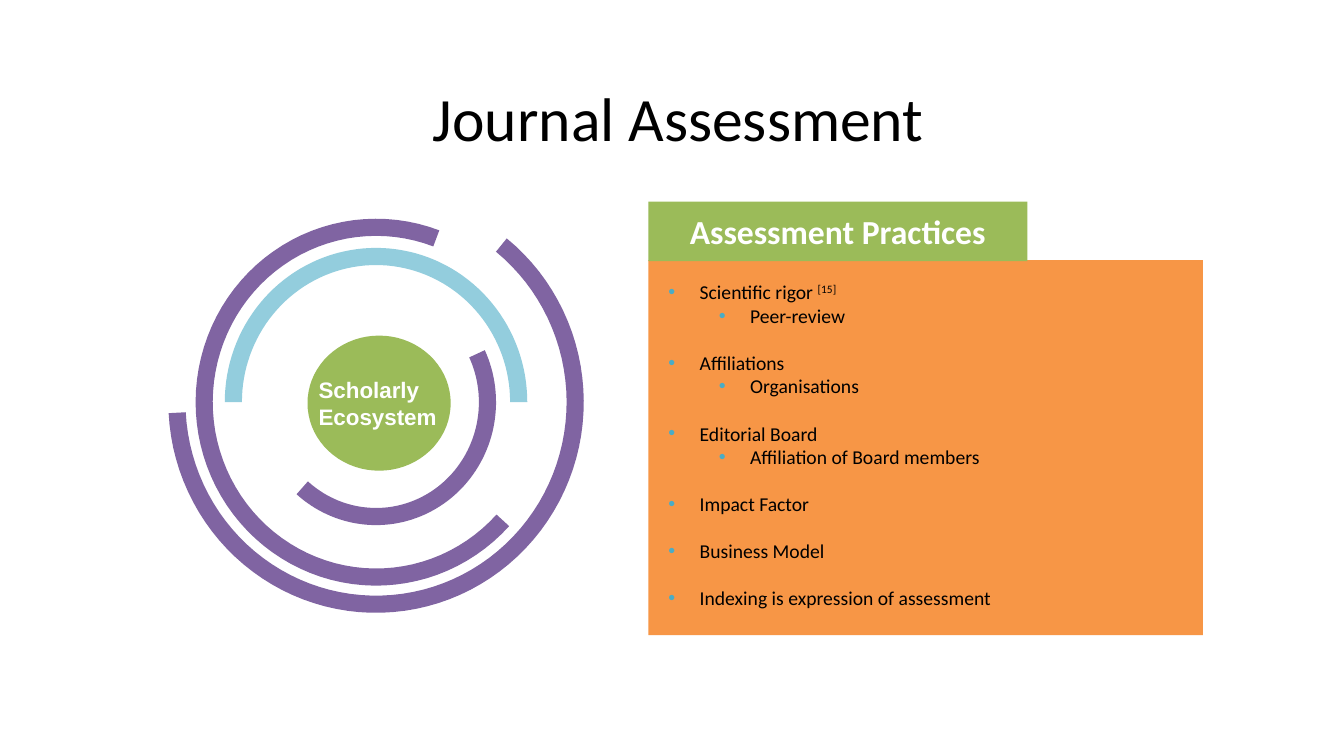
import math

import lxml.etree
import pptx
import pptx.dml.color
import pptx.enum.shapes
import pptx.enum.text
import pptx.oxml.ns
import pptx.util

Inches, Pt = pptx.util.Inches, pptx.util.Pt
ANCHOR = pptx.enum.text.MSO_ANCHOR
ALIGN = pptx.enum.text.PP_ALIGN

COLORS = {
    "black": "000000",
    "white": "FFFFFF",
    "orange": "F79646",
    "green": "9BBB59",
    "purple": "8064A2",
    "sky": "93CDDD",
    "bullet": "4BACC6",
}

RING_CENTER = (3.73, 3.99)
RING_THICKNESS = 0.17
RING_SQUEEZE = 0.03  # horizontal radius is this much shorter than the vertical

# vertical outer radius, start and end angle (clockwise from east), colour
RINGS = [
    (1.22, -25, 131.5, "purple"),
    (1.53, 180, 360, "sky"),
    (1.82, 42.5, 290.5, "purple"),
    (2.09, -51, 177, "purple"),
]

PRACTICES = [
    ("Scientific rigor ", "[15]", "Peer-review"),
    ("Affiliations", None, "Organisations"),
    ("Editorial Board", None, "Affiliation of Board members"),
    ("Impact Factor", None, None),
    ("Business Model", None, None),
    ("Indexing is expression of assessment", None, None),
]


def arc(center, rx, ry, start, end, steps=72):
    """Points along an ellipse, angles in degrees clockwise from east."""
    angles = [math.radians(start + (end - start) * i / steps) for i in range(steps + 1)]
    return [(center[0] + rx * math.cos(a), center[1] + ry * math.sin(a)) for a in angles]


class SlideBuilder:
    def __init__(self, slide, font="Calibri"):
        self.slide = slide
        self.font = font

    def style(self, sp, color):
        sp.shadow.inherit = False
        sp.fill.solid()
        sp.fill.fore_color.rgb = pptx.dml.color.RGBColor.from_string(COLORS[color])
        sp.line.fill.background()
        return sp

    def frame(self, sp, insets, anchor):
        tf = sp.text_frame
        tf.word_wrap = True
        tf.auto_size = pptx.enum.text.MSO_AUTO_SIZE.NONE
        tf.vertical_anchor = anchor
        left, top, right, bottom = insets
        tf.margin_left, tf.margin_right = Inches(left), Inches(right)
        tf.margin_top, tf.margin_bottom = Inches(top), Inches(bottom)
        return tf

    def run(self, p, text, size, color, bold=False, font=None):
        r = p.add_run()
        r.text = text
        r.font.name = font or self.font
        r.font.size = Pt(size)
        r.font.bold = bold
        r.font.color.rgb = pptx.dml.color.RGBColor.from_string(COLORS[color])
        return r

    def title(self, text, x, y, w, h):
        sp = self.slide.shapes.title
        sp.left, sp.top, sp.width, sp.height = (Inches(v) for v in (x, y, w, h))
        p = self.frame(sp, (0.1, 0.05, 0.1, 0.05), ANCHOR.MIDDLE).paragraphs[0]
        p.alignment = ALIGN.CENTER
        self.run(p, text, 44, "black")

    def rect(self, x, y, w, h, color):
        sp = self.slide.shapes.add_shape(
            pptx.enum.shapes.MSO_SHAPE.RECTANGLE,
            Inches(x), Inches(y), Inches(w), Inches(h))
        return self.style(sp, color)

    def polygon(self, shapes, points, color):
        points = [(Inches(x), Inches(y)) for x, y in points]
        builder = shapes.build_freeform(*points[0])
        builder.add_line_segments(points[1:], close=True)
        return self.style(builder.convert_to_shape(), color)

    def ring(self, shapes, radius, start, end, color):
        inner = radius - RING_THICKNESS
        outer_edge = arc(RING_CENTER, radius - RING_SQUEEZE, radius, start, end)
        inner_edge = arc(RING_CENTER, inner - RING_SQUEEZE, inner, end, start)
        self.polygon(shapes, outer_edge + inner_edge, color)

    def bullet(self, p, level):
        p.level = level
        pPr = p._p.get_or_add_pPr()
        pPr.set("marL", str(Inches(0.31 + 0.5 * level)))
        pPr.set("indent", str(Inches(-0.31)))
        qn = pptx.oxml.ns.qn
        clr = lxml.etree.SubElement(pPr, qn("a:buClr"))
        lxml.etree.SubElement(clr, qn("a:srgbClr")).set("val", COLORS["bullet"])
        lxml.etree.SubElement(pPr, qn("a:buFont")).set("typeface", "Arial")
        lxml.etree.SubElement(pPr, qn("a:buChar")).set("char", "•")

    def bullet_line(self, p, text, level, gap):
        self.bullet(p, level)
        p.alignment = ALIGN.LEFT
        p.line_spacing = Pt(16.8)
        p.space_before = Pt(gap)
        self.run(p, text, 14, "black")

    def practices(self, sp, items):
        tf = self.frame(sp, (0.2, 0.2, 0.2, 0.2), ANCHOR.TOP)
        for i, (text, citation, detail) in enumerate(items):
            p = tf.add_paragraph() if i else tf.paragraphs[0]
            self.bullet_line(p, text, 0, 16.8 if i else 0)
            if citation:
                r = self.run(p, citation, 14, "black")
                r._r.get_or_add_rPr().set("baseline", "30000")
            if detail:
                self.bullet_line(tf.add_paragraph(), detail, 1, 0)

    def ecosystem(self):
        shapes = self.slide.shapes.add_group_shape().shapes
        for ring in RINGS:
            self.ring(shapes, *ring)
        hub = self.polygon(shapes, arc((3.76, 4), 0.71, 0.67, 0, 360), "green")
        p = self.frame(hub, (0.11, 0.04, 0.05, 0.04), ANCHOR.MIDDLE).paragraphs[0]
        p.alignment = ALIGN.LEFT
        self.run(p, "Scholarly Ecosystem", 16, "white", bold=True, font="Arial")


def main():
    prs = pptx.Presentation()
    prs.slide_width, prs.slide_height = Inches(13.33), Inches(7.5)
    s = SlideBuilder(prs.slides.add_slide(prs.slide_layouts[5]))

    s.title("Journal Assessment", 1.04, 0.43, 11.38, 1.45)
    s.practices(s.rect(6.43, 2.58, 5.5, 3.72, "orange"), PRACTICES)

    header = s.rect(6.43, 2, 3.76, 0.59, "green")
    p = s.frame(header, (0.2, 0.1, 0.2, 0.1), ANCHOR.MIDDLE).paragraphs[0]
    p.alignment = ALIGN.CENTER
    s.run(p, "Assessment Practices", 24, "white", bold=True)

    s.ecosystem()
    prs.save("out.pptx")


if __name__ == "__main__":
    main()
